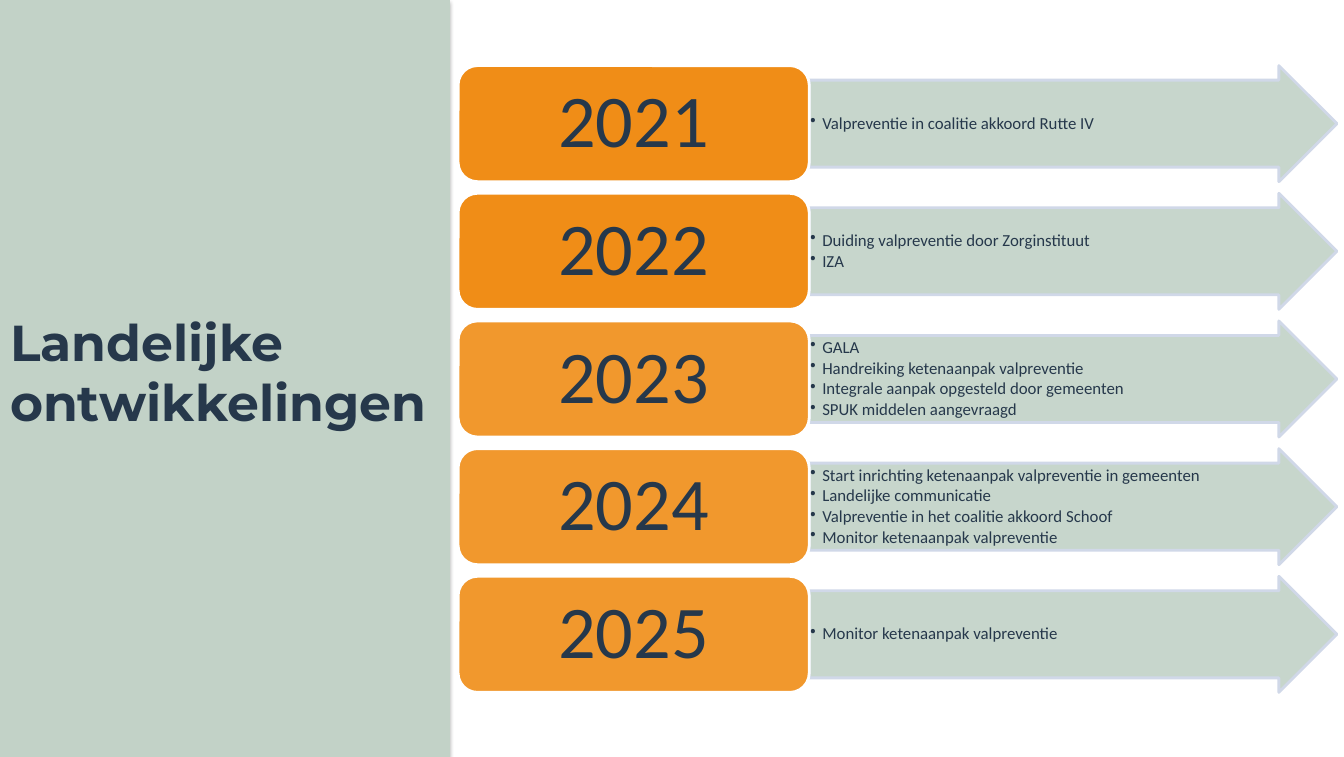
from dataclasses import dataclass

from lxml import etree
from pptx import Presentation
from pptx.dml.color import RGBColor
from pptx.enum import shapes, text
from pptx.oxml import ns
from pptx.util import Inches, Pt

SAGE, ORANGE, NAVY = "C2D2C7", "F08D17", "26384B"
WHITE, PALE_BLUE = "FFFFFF", "D0D8E8"
FIRST_TOP, LAST_TOP, ROW_HEIGHT = 0.65, 5.71, 1.15
YEAR_LEFT, YEAR_WIDTH, ARROW_WIDTH = 4.54, 3.48, 5.23


@dataclass
class Milestone:
    year: str
    items: list[str]
    opacity: int = 90


MILESTONES = [
    Milestone("2021", ["Valpreventie in coalitie akkoord Rutte IV"], 100),
    Milestone("2022", ["Duiding valpreventie door Zorginstituut", "IZA"], 100),
    Milestone("2023", ["GALA", "Handreiking ketenaanpak valpreventie",
                       "Integrale aanpak opgesteld door gemeenten",
                       "SPUK middelen aangevraagd"]),
    Milestone("2024", ["Start inrichting ketenaanpak valpreventie in gemeenten",
                       "Landelijke communicatie",
                       "Valpreventie in het coalitie akkoord Schoof",
                       "Monitor ketenaanpak valpreventie"]),
    Milestone("2025", ["Monitor ketenaanpak valpreventie"]),
]


def rgb(value: str) -> RGBColor:
    return RGBColor.from_string(value)


def set_attrs(obj, values: dict) -> None:
    for name, value in values.items():
        setattr(obj, name, value)


def add_box(s, kind, box: tuple, fill: str, line: str | None = None, opacity: int = 100):
    sp = s.shapes.add_shape(kind, *map(Inches, box))
    sp.shadow.inherit = False
    sp.fill.solid()
    sp.fill.fore_color.rgb = rgb(fill)
    if opacity < 100:
        color = sp._element.spPr.find(ns.qn("a:solidFill"))[0]
        etree.SubElement(color, ns.qn("a:alpha"), val=str(opacity * 1000))
    if line:
        sp.line.color.rgb = rgb(line)
        sp.line.width = Pt(2)
    else:
        sp.line.fill.background()
    return sp


def add_shadow(sp) -> None:
    effects = sp._element.spPr.find(ns.qn("a:effectLst"))
    shadow = etree.SubElement(effects, ns.qn("a:outerShdw"), blurRad=str(Pt(3)),
                              dist=str(Pt(1.8)), dir="5400000", rotWithShape="0")
    color = etree.SubElement(shadow, ns.qn("a:srgbClr"), val="000000")
    etree.SubElement(color, ns.qn("a:alpha"), val="35000")


def set_margins(tf, side: float, end: float) -> None:
    set_attrs(tf, {"margin_left": Inches(side), "margin_right": Inches(side),
                   "margin_top": Inches(end), "margin_bottom": Inches(end),
                   "vertical_anchor": text.MSO_ANCHOR.MIDDLE, "word_wrap": True})


def add_text(p, words: str, size: float, align, font: str = "Calibri",
             bold: bool = False, spacing: float = 0.9) -> None:
    set_attrs(p, {"alignment": align, "line_spacing": spacing, "space_before": Pt(0)})
    r = p.add_run()
    r.text = words
    set_attrs(r.font, {"name": font, "size": Pt(size), "bold": bold})
    r.font.color.rgb = rgb(NAVY)


def add_bullet(p) -> None:
    pPr = p._p.get_or_add_pPr()
    pPr.set("marL", str(Inches(0.12)))
    pPr.set("indent", str(Inches(-0.12)))
    etree.SubElement(pPr, ns.qn("a:buChar"), char="•")


def add_milestone(s, milestone: Milestone, top: float) -> None:
    arrow = add_box(s, shapes.MSO_SHAPE.RIGHT_ARROW,
                    (YEAR_LEFT + YEAR_WIDTH, top, ARROW_WIDTH, ROW_HEIGHT),
                    SAGE, PALE_BLUE, 90)
    arrow.adjustments[0] = 0.75
    tf = arrow.text_frame
    set_margins(tf, 0.01, 0.01)
    for i, item in enumerate(milestone.items):
        p = tf.add_paragraph() if i else tf.paragraphs[0]
        add_bullet(p)
        add_text(p, item, 12, text.PP_ALIGN.LEFT)
        p.space_after = Pt(1.8)

    year = add_box(s, shapes.MSO_SHAPE.ROUNDED_RECTANGLE,
                   (YEAR_LEFT, top, YEAR_WIDTH, ROW_HEIGHT),
                   ORANGE, WHITE, milestone.opacity)
    set_margins(year.text_frame, 0.22, 0.11)
    add_text(year.text_frame.paragraphs[0], milestone.year, 53, text.PP_ALIGN.CENTER)


def main() -> None:
    prs = Presentation()
    set_attrs(prs, {"slide_width": Inches(13.32), "slide_height": Inches(7.5)})
    s = prs.slides.add_slide(prs.slide_layouts[5])

    panel = add_box(s, shapes.MSO_SHAPE.RECTANGLE, (0, 0, 4.46, 7.5), SAGE)
    add_shadow(panel)
    title = s.shapes.title
    panel._element.addnext(title._element)
    set_attrs(title, {"left": Inches(0), "top": Inches(1.32),
                      "width": Inches(4.51), "height": Inches(4.72)})
    set_margins(title.text_frame, 0.1, 0.05)
    title.text_frame.auto_size = text.MSO_AUTO_SIZE.NONE
    add_text(title.text_frame.paragraphs[0], "Landelijke ontwikkelingen", 36,
             text.PP_ALIGN.LEFT, "Montserrat", True, 1.0)

    pitch = (LAST_TOP - FIRST_TOP) / (len(MILESTONES) - 1)
    for i, milestone in enumerate(MILESTONES):
        add_milestone(s, milestone, FIRST_TOP + i * pitch)
    prs.save("out.pptx")


if __name__ == "__main__":
    main()
